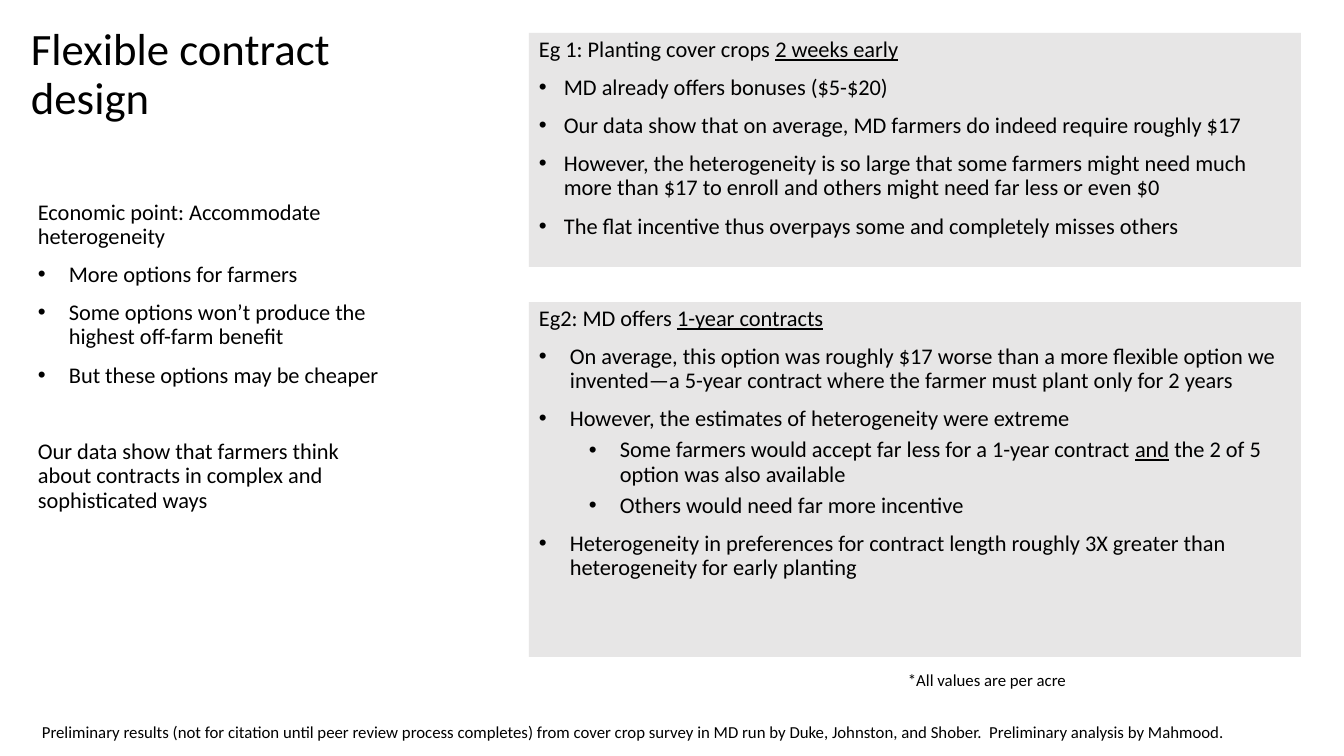
from dataclasses import dataclass
from typing import Optional

from lxml import etree
from pptx import Presentation, util as u
from pptx.dml.color import RGBColor
from pptx.enum import shapes, text
from pptx.oxml import ns

EMU_PER_PX = 12192000 / 1344


@dataclass(frozen=True)
class Theme:
    font: str = "Calibri"
    ink: RGBColor = RGBColor(0x00, 0x00, 0x00)
    panel: RGBColor = RGBColor(0xE7, 0xE6, 0xE6)
    title_size: int = 32
    body_size: int = 16
    note_size: int = 12


@dataclass(frozen=True)
class Line:
    """One paragraph; underscores enclose underlined words."""
    words: str
    indent: int = 0  # hanging indent in px; a bullet is drawn when above 0
    level: int = 0
    before: float = 10
    spacing: Optional[float] = 0.9


@dataclass(frozen=True)
class Block:
    left: int
    top: int
    width: int
    height: int
    lines: tuple[Line, ...]
    size: int
    panel: bool = False
    anchor: text.MSO_ANCHOR = text.MSO_ANCHOR.TOP
    auto_size: text.MSO_AUTO_SIZE = text.MSO_AUTO_SIZE.NONE


THEME = Theme()
LEVEL_STEP = 50
PANEL_LEFT, PANEL_WIDTH = 529, 772
FIT = text.MSO_AUTO_SIZE.SHAPE_TO_FIT_TEXT

BLOCKS = (
    # Title and economic point
    Block(21, 9, 433, 120, (Line("Flexible contract design", before=0),),
          THEME.title_size, anchor=text.MSO_ANCHOR.BOTTOM),
    Block(28, 196, 372, 487, (
        Line("Economic point: Accommodate heterogeneity"),
        Line("More options for farmers", 31),
        Line("Some options won’t produce the highest off-farm benefit", 31),
        Line("But these options may be cheaper", 31),
        Line("Our data show that farmers think about contracts in complex and "
             "sophisticated ways", before=37.5),
    ), THEME.body_size),
    # Footnotes
    Block(32, 717, 1280, 30, (
        Line("Preliminary results (not for citation until peer review process completes) "
             "from cover crop survey in MD run by Duke, Johnston, and Shober.  "
             "Preliminary analysis by Mahmood.", before=0, spacing=None),
    ), THEME.note_size, auto_size=FIT),
    Block(898, 665, 186, 30, (Line("*All values are per acre", before=0, spacing=None),),
          THEME.note_size, auto_size=FIT),
    # Example panels
    Block(PANEL_LEFT, 33, PANEL_WIDTH, 234, (
        Line("Eg 1: Planting cover crops _2 weeks early_"),
        Line("MD already offers bonuses ($5-$20)", 25),
        Line("Our data show that on average, MD farmers do indeed require roughly $17", 25),
        Line("However, the heterogeneity is so large that some farmers might need much "
             "more than $17 to enroll and others might need far less or even $0", 25),
        Line("The flat incentive thus overpays some and completely misses others", 25),
    ), THEME.body_size, panel=True),
    Block(PANEL_LEFT, 302, PANEL_WIDTH, 355, (
        Line("Eg2: MD offers _1-year contracts_"),
        Line("On average, this option was roughly $17 worse than a more flexible option "
             "we invented—a 5-year contract where the farmer must plant only for 2 years", 31),
        Line("However, the estimates of heterogeneity were extreme", 31),
        Line("Some farmers would accept far less for a 1-year contract _and_ the 2 of 5 "
             "option was also available", 31, level=1, before=5),
        Line("Others would need far more incentive", 31, level=1, before=5),
        Line("Heterogeneity in preferences for contract length roughly 3X greater than "
             "heterogeneity for early planting", 31),
    ), THEME.body_size, panel=True),
)


def px(length: int) -> u.Emu:
    return u.Emu(round(length * EMU_PER_PX))


def add_bullet(paragraph, line: Line) -> None:
    properties = paragraph._p.get_or_add_pPr()
    properties.set("marL", str(px(line.level * LEVEL_STEP + line.indent)))
    properties.set("indent", str(-px(line.indent)))
    etree.SubElement(properties, ns.qn("a:buFont"), typeface="Arial")
    etree.SubElement(properties, ns.qn("a:buChar"), char="•")


def write_line(paragraph, line: Line, size: int) -> None:
    paragraph.alignment = text.PP_ALIGN.LEFT
    paragraph.level = line.level
    paragraph.line_spacing = line.spacing
    paragraph.space_before = u.Pt(line.before)
    if line.indent:
        add_bullet(paragraph, line)
    paragraph.font.name = THEME.font
    paragraph.font.size = u.Pt(size)
    paragraph.font.color.rgb = THEME.ink
    for index, words in enumerate(line.words.split("_")):
        if words:
            run = paragraph.add_run()
            run.text = words
            if index % 2:
                run.font.underline = True


def add_block(slide, block: Block) -> None:
    bounds = [px(n) for n in (block.left, block.top, block.width, block.height)]
    if block.panel:
        shape = slide.shapes.add_shape(shapes.MSO_SHAPE.RECTANGLE, *bounds)
        shape.shadow.inherit = False
        shape.fill.solid()
        shape.fill.fore_color.rgb = THEME.panel
        shape.line.fill.background()
    else:
        shape = slide.shapes.add_textbox(*bounds)
    frame = shape.text_frame
    frame.word_wrap = True
    frame.auto_size = block.auto_size
    frame.vertical_anchor = block.anchor
    for index, line in enumerate(block.lines):
        paragraph = frame.add_paragraph() if index else frame.paragraphs[0]
        write_line(paragraph, line, block.size)


def main() -> None:
    presentation = Presentation()
    presentation.slide_width, presentation.slide_height = px(1344), px(756)
    slide = presentation.slides.add_slide(presentation.slide_layouts[6])
    for block in BLOCKS:
        add_block(slide, block)
    presentation.save("out.pptx")


if __name__ == "__main__":
    main()
